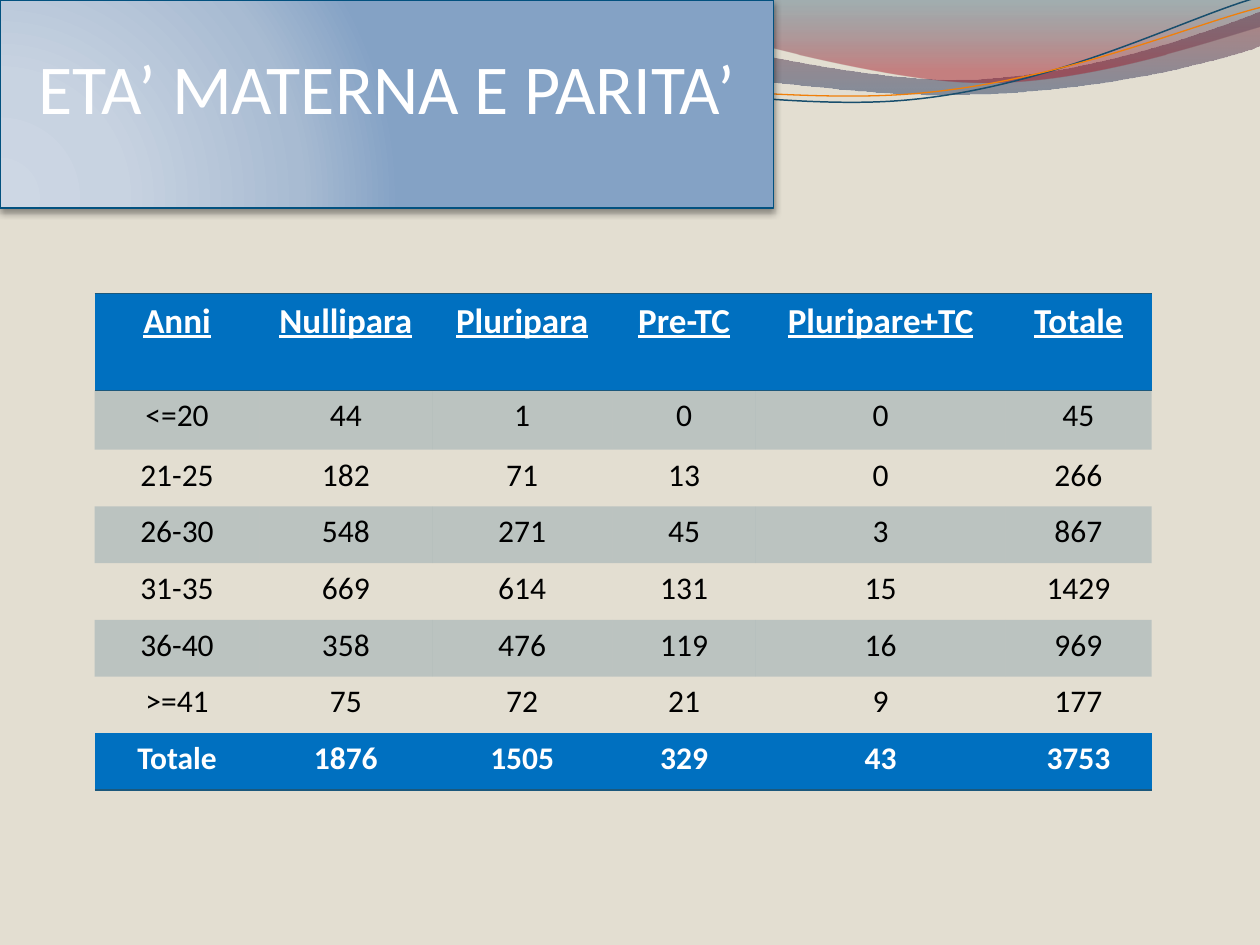
from lxml.etree import SubElement
from pptx import Presentation
from pptx.dml.color import RGBColor
from pptx.enum.shapes import MSO_SHAPE
from pptx.enum.text import MSO_ANCHOR, PP_ALIGN
from pptx.oxml import parse_xml
from pptx.oxml.ns import nsdecls, qn
from pptx.util import Inches, Pt

TITLE = "ETA’ MATERNA E PARITA’"
HEADER = ["Anni", "Nullipara", "Pluripara", "Pre-TC", "Pluripare+TC", "Totale"]
BODY = [
    ["<=20", 44, 1, 0, 0, 45],
    ["21-25", 182, 71, 13, 0, 266],
    ["26-30", 548, 271, 45, 3, 867],
    ["31-35", 669, 614, 131, 15, 1429],
    ["36-40", 358, 476, 119, 16, 969],
    [">=41", 75, 72, 21, 9, 177],
]
TOTALS = ["Totale", 1876, 1505, 329, 43, 3753]
COLUMN_WIDTHS = [1.31, 1.37, 1.43, 1.14, 1.98, 1.16]
ROW_HEIGHTS = [0.77, 0.47] + [0.45] * 6

BLUE, NAVY, WHITE, BLACK = "0070C0", "1B587C", "FFFFFF", "000000"
DOWNWARD = '<a:lin ang="5400000" scaled="1"/>'
FROM_CORNER = ('<a:path path="circle"><a:fillToRect l="5000" t="100000" '
               'r="120000" b="10000"/></a:path>')
TITLE_STOPS = [(0, "CDD7E4", 100), (30, "C8D3E1", 100),
               (75, "A8BBD2", 100), (100, "84A2C5", 100)]

# Each step holds one point for a straight line, three for a curve.
WAVES = [
    {"start": (0, -0.01), "stops": [(0, "7E1621", 45), (100, "005689", 55)],
     "steps": [[(4.4, -0.01)],
               [(4.76, 0.17), (6.64, 0.63), (7.58, 0.63)],
               [(8.53, 0.63), (9.58, 0.26), (10, 0.09)],
               [(10.01, 0.36)],
               [(9.83, 0.44), (8.7, 0.76), (7.46, 0.75)],
               [(6.22, 0.75), (3.82, 0.28), (2.57, 0.34)],
               [(1.29, 0.35), (0.46, 0.83), (-0.01, 1.13)]]},
    {"start": (4.79, -0.01), "stops": [(0, "094467", 30), (80, "A10F1F", 45)],
     "steps": [[(5.09, 0.11), (6.82, 0.62), (7.69, 0.65)],
               [(8.56, 0.69), (9.61, 0.32), (10, 0.21)],
               [(10, 0)]]},
    {"start": (0, 1.11), "line": ("184E6D", 0.85),
     "steps": [[(0.48, 0.93), (1.58, 0.57), (2.77, 0.52)],
               [(3.95, 0.47), (5.93, 0.89), (7.13, 0.8)],
               [(8.33, 0.71), (9.38, 0.15), (9.98, -0.02)]]},
    {"start": (0, 1.04), "line": ("F07F09", 0.75),
     "steps": [[(0.47, 0.96), (1.64, 0.61), (2.83, 0.56)],
               [(4.03, 0.51), (5.97, 0.83), (7.17, 0.75)],
               [(8.36, 0.67), (9.41, 0.21), (10, 0.06)]]},
]


def color(hex_code):
    return RGBColor.from_string(hex_code)


def set_line(shape, hex_code, width):
    shape.line.color.rgb = color(hex_code)
    shape.line.width = Pt(width)


def set_gradient(shape, stops, direction):
    shape.fill.background()
    marks = "".join(
        f'<a:gs pos="{pos * 1000}"><a:srgbClr val="{hex_code}">'
        f'<a:alpha val="{alpha * 1000}"/></a:srgbClr></a:gs>'
        for pos, hex_code, alpha in stops)
    gradient = parse_xml(f'<a:gradFill {nsdecls("a")} rotWithShape="1">'
                         f'<a:gsLst>{marks}</a:gsLst>{direction}</a:gradFill>')
    properties = shape.element.spPr
    properties.replace(properties.find(qn("a:noFill")), gradient)


def add_wave(slide, wave):
    def emu(point):
        return tuple(Inches(value) for value in point)

    points = [emu(point) for step in wave["steps"] for point in step]
    builder = slide.shapes.build_freeform(*emu(wave["start"]))
    builder.add_line_segments(points, close="stops" in wave)
    shape = builder.convert_to_shape()
    shape.shadow.inherit = False
    segments = iter(shape.element.findall(".//" + qn("a:lnTo")))
    for step in wave["steps"]:
        first, *others = [next(segments) for _ in step]
        if others:
            first.tag = qn("a:cubicBezTo")
        for other in others:
            first.append(other[0])
            other.getparent().remove(other)
    if "stops" in wave:
        set_gradient(shape, wave["stops"], DOWNWARD)
        shape.line.fill.background()
    else:
        shape.fill.background()
        set_line(shape, *wave["line"])


def write(frame, text, size, hex_code, bold=False, underline=False):
    paragraph = frame.paragraphs[0]
    paragraph.text = str(text)
    paragraph.alignment = PP_ALIGN.CENTER
    font = paragraph.font
    font.name, font.size, font.bold, font.underline = "Calibri", Pt(size), bold, underline
    font.color.rgb = color(hex_code)


def fill_cell(cell, hex_code, alpha=100):
    cell.fill.solid()
    cell.fill.fore_color.rgb = color(hex_code)
    if alpha < 100:
        tint = cell._tc.tcPr.find(".//" + qn("a:srgbClr"))
        SubElement(tint, qn("a:alpha"), val=str(alpha * 1000))


def add_borders(cell, sides):
    for index, side in enumerate(sides):
        cell._tc.tcPr.insert(index, parse_xml(
            f'<a:ln{side} {nsdecls("a")} w="12700"><a:solidFill>'
            f'<a:srgbClr val="{NAVY}"/></a:solidFill></a:ln{side}>'))


def add_births_table(slide):
    rows = [HEADER, *BODY, TOTALS]
    frame = slide.shapes.add_table(
        len(rows), len(HEADER), Inches(0.75), Inches(2.33),
        Inches(sum(COLUMN_WIDTHS)), Inches(sum(ROW_HEIGHTS)))
    table = frame.table
    table._tbl.tblPr.find(qn("a:tableStyleId")).text = "{2D5ABB26-0587-4C30-8999-92F81FD0307C}"
    for column, width in zip(table.columns, COLUMN_WIDTHS):
        column.width = Inches(width)
    for r, values in enumerate(rows):
        table.rows[r].height = Inches(ROW_HEIGHTS[r])
        is_header, is_total = r == 0, r == len(rows) - 1
        strong = is_header or is_total
        for c, value in enumerate(values):
            cell = table.cell(r, c)
            write(cell.text_frame, value, 20 if is_header else 18,
                  WHITE if strong else BLACK, strong, is_header)
            if strong:
                fill_cell(cell, BLUE)
                add_borders(cell, "TB" if is_header else "B")
            elif r % 2:
                fill_cell(cell, NAVY, 20)
            else:
                cell.fill.background()


def add_title(slide):
    banner = slide.shapes.add_shape(MSO_SHAPE.RECTANGLE, 0, 0, Inches(6.14), Inches(1.65))
    set_gradient(banner, TITLE_STOPS, FROM_CORNER)
    set_line(banner, "02517F", 1)
    banner.shadow.inherit = False
    banner.element.spPr.find(qn("a:effectLst")).append(parse_xml(
        f'<a:outerShdw {nsdecls("a")} blurRad="{Pt(4)}" dist="{Pt(2)}" dir="5400000">'
        f'<a:srgbClr val="{BLACK}"><a:alpha val="40000"/></a:srgbClr></a:outerShdw>'))
    frame = banner.text_frame
    frame.word_wrap = True
    frame.vertical_anchor = MSO_ANCHOR.BOTTOM
    frame.margin_left = frame.margin_right = 0
    frame.margin_bottom = Inches(0.63)
    write(frame, TITLE, 40, WHITE)


def main():
    deck = Presentation()
    deck.slide_width, deck.slide_height = Inches(10), Inches(7.5)
    slide = deck.slides.add_slide(deck.slide_layouts[6])
    slide.background.fill.solid()
    slide.background.fill.fore_color.rgb = color("E3DED1")
    for wave in WAVES:
        add_wave(slide, wave)
    add_births_table(slide)
    add_title(slide)
    deck.save("out.pptx")


if __name__ == "__main__":
    main()
